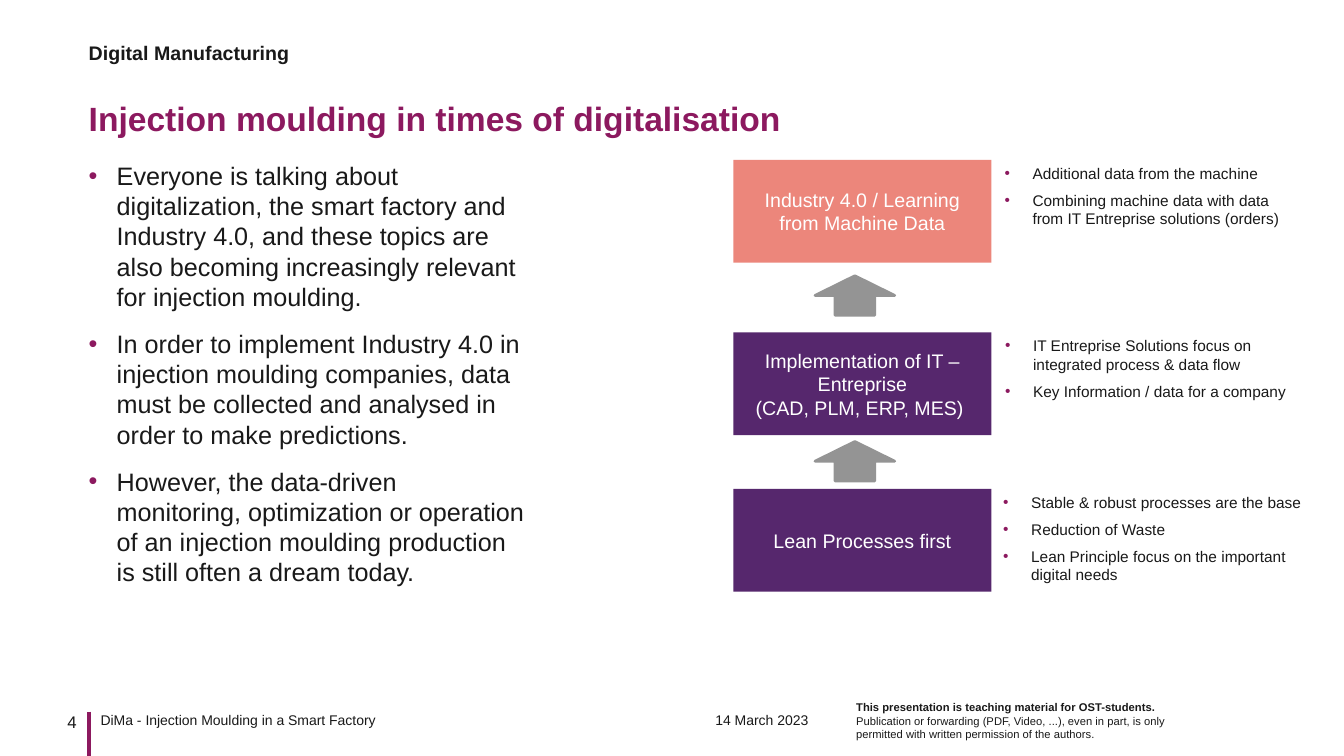
from pptx import Presentation
from pptx.dml.color import RGBColor
from pptx.enum.shapes import MSO_CONNECTOR, MSO_SHAPE
from pptx.enum.text import MSO_ANCHOR, MSO_AUTO_SIZE, PP_ALIGN
from pptx.oxml import parse_xml
from pptx.oxml.ns import nsdecls, qn
from pptx.util import Pt

BERRY = RGBColor(0x8C, 0x19, 0x5F)
PURPLE = RGBColor(0x56, 0x27, 0x6D)
CORAL = RGBColor(0xEC, 0x86, 0x7B)
GREY = RGBColor(0x94, 0x94, 0x94)
INK = RGBColor(0x19, 0x19, 0x19)
WHITE = RGBColor(0xFF, 0xFF, 0xFF)
TOP, MIDDLE = MSO_ANCHOR.TOP, MSO_ANCHOR.MIDDLE
LEFT, CENTER, RIGHT = PP_ALIGN.LEFT, PP_ALIGN.CENTER, PP_ALIGN.RIGHT
RECTANGLE, UP_ARROW = MSO_SHAPE.RECTANGLE, MSO_SHAPE.UP_ARROW
STRAIGHT = MSO_CONNECTOR.STRAIGHT
NO_AUTOFIT = MSO_AUTO_SIZE.NONE

MARGIN = 63.4
FOOTER_TOP = 508.3
INDENT = 20
STEP_LEFT, STEP_WIDTH, STEP_HEIGHT = 524.2, 184.3, 73.4
PADDED = (7.2, 3.6, 7.2, 3.6)

TOPICS = [
    "Everyone is talking about digitalization, the smart factory and Industry 4.0, "
    "and these topics are also becoming increasingly relevant for injection moulding.",
    "In order to implement Industry 4.0 in injection moulding companies, data must be "
    "collected and analysed in order to make predictions.",
    "However, the data-driven monitoring, optimization or operation of an injection "
    "moulding production is still often a dream today.",
]
STEPS = [
    (114.2, CORAL, "Industry 4.0 / Learning from Machine Data", 709.4,
     ["Additional data from the machine",
      "Combining machine data with data\nfrom IT Entreprise solutions (orders)"]),
    (237.4, PURPLE, "Implementation of IT – Entreprise\n(CAD, PLM, ERP, MES) ", 709.8,
     ["IT Entreprise Solutions focus on\nintegrated process & data flow",
      "Key Information / data for a company"]),
    (349.2, PURPLE, "Lean Processes first", 708.4,
     ["Stable & robust processes are the base",
      "Reduction of Waste",
      "Lean Principle focus on the important\ndigital needs"]),
]
ARROW_TOPS = (197, 315.4)


class SlideBuilder:
    """Draws styled elements on one slide, with lengths in points."""

    def __init__(self, page, font_name):
        self.page = page
        self.font_name = font_name

    def apply(self, target, values):
        for name, value in values.items():
            setattr(target, name, value)

    def style_span(self, span, size, color=INK, bold=False):
        self.apply(span.font, {"name": self.font_name, "size": Pt(size), "bold": bold})
        span.font.color.rgb = color

    def add_bullet(self, para):
        properties = para._p.get_or_add_pPr()
        properties.set("marL", str(Pt(INDENT)))
        properties.set("indent", str(-Pt(INDENT)))
        for markup in (f'<a:buClr {nsdecls("a")}><a:srgbClr val="{BERRY}"/></a:buClr>',
                       f'<a:buFont {nsdecls("a")} typeface="{self.font_name}"/>',
                       f'<a:buChar {nsdecls("a")} char="•"/>'):
            properties.append(parse_xml(markup))

    def fill_text(self, box, texts, size, color=INK, bold=False, align=LEFT, anchor=TOP,
                  insets=(0, 0, 0, 0), bullets=False, before=0, after=0, spacing=1.0):
        frame = box.text_frame
        sides = ("margin_left", "margin_top", "margin_right", "margin_bottom")
        self.apply(frame, {"word_wrap": True, "auto_size": NO_AUTOFIT,
                           "vertical_anchor": anchor,
                           **{side: Pt(inset) for side, inset in zip(sides, insets)}})
        for index, text in enumerate(texts):
            para = frame.add_paragraph() if index else frame.paragraphs[0]
            para.text = text
            if bullets:
                self.add_bullet(para)
            self.apply(para, {"alignment": align, "line_spacing": spacing,
                              "space_before": Pt(before if index else 0),
                              "space_after": Pt(after)})
            for span in para.runs:
                self.style_span(span, size, color, bold)

    def placeholder(self, box, bounds, texts, size, **style):
        names = ("left", "top", "width", "height")
        self.apply(box, {name: Pt(value) for name, value in zip(names, bounds)})
        self.fill_text(box, texts, size, **style)

    def text(self, bounds, texts, size, **style):
        box = self.page.shapes.add_textbox(*map(Pt, bounds))
        self.fill_text(box, texts, size, **style)
        return box

    def shape(self, kind, bounds, color, outlined=False):
        box = self.page.shapes.add_shape(kind, *map(Pt, bounds))
        box.shadow.inherit = False
        box.fill.solid()
        box.fill.fore_color.rgb = color
        if outlined:
            box.line.color.rgb = color
            box.line.width = Pt(2)
        else:
            box.line.fill.background()
        return box

    def line(self, start, end, color, width):
        rule = self.page.shapes.add_connector(STRAIGHT, *map(Pt, start + end))
        rule.line.color.rgb = color
        rule.line.width = Pt(width)
        rule._element.spPr.append(rule._element.makeelement(qn("a:effectLst"), {}))


def main():
    deck = Presentation()
    deck.slide_width, deck.slide_height = Pt(960.5), Pt(540)
    page = deck.slides.add_slide(deck.slide_layouts[1])
    builder = SlideBuilder(page, "Arial")

    builder.line((MARGIN, FOOTER_TOP), (MARGIN, 540), BERRY, 3)
    disclaimer = builder.text((604.8, 496.8, 239.8, 36),
                              ["This presentation is teaching material for OST-students."],
                              8, bold=True, insets=PADDED)
    para = disclaimer.text_frame.paragraphs[0]
    para.add_line_break()
    span = para.add_run()
    span.text = ("Publication or forwarding (PDF, Video, ...), even in part, is only "
                 "permitted with written permission of the authors.")
    builder.style_span(span, 8)
    builder.text((511.2, FOOTER_TOP, 90, 14.4), ["14 March 2023"], 10)
    builder.text((MARGIN, FOOTER_TOP, 422.6, 25.9),
                 ["DiMa - Injection Moulding in a Smart Factory"], 10, insets=(8.5, 0, 0, 0))
    builder.text((20.9, FOOTER_TOP, 42.5, 14.4), ["4"], 12, align=RIGHT,
                 insets=(0, 0, 8.5, 0))

    builder.placeholder(page.shapes.title, (MARGIN, 54.7, 870.5, 54),
                        ["Injection moulding in times of digitalisation"], 24,
                        color=BERRY, bold=True, anchor=MIDDLE, spacing=1.2)
    builder.placeholder(page.placeholders[1], (MARGIN, 114.5, 311.8, 374.4), TOPICS, 18,
                        bullets=True, before=12)
    builder.text((MARGIN, 26.6, 870.5, 22.3), ["Digital Manufacturing"], 14,
                 bold=True, anchor=MIDDLE)

    for top, color, label, notes_left, notes in STEPS:
        step = builder.shape(RECTANGLE, (STEP_LEFT, top, STEP_WIDTH, STEP_HEIGHT), color)
        builder.fill_text(step, [label], 14, color=WHITE, align=CENTER, anchor=MIDDLE,
                          insets=PADDED)
        builder.text((notes_left, top, 247.7, STEP_HEIGHT), notes, 11, bullets=True,
                     after=6, insets=(8.5, 2.9, 8.5, 8.5))
    for top in ARROW_TOPS:
        builder.shape(UP_ARROW, (582.5, top, 56.9, 28.1), GREY, outlined=True)

    deck.save("out.pptx")


if __name__ == "__main__":
    main()
